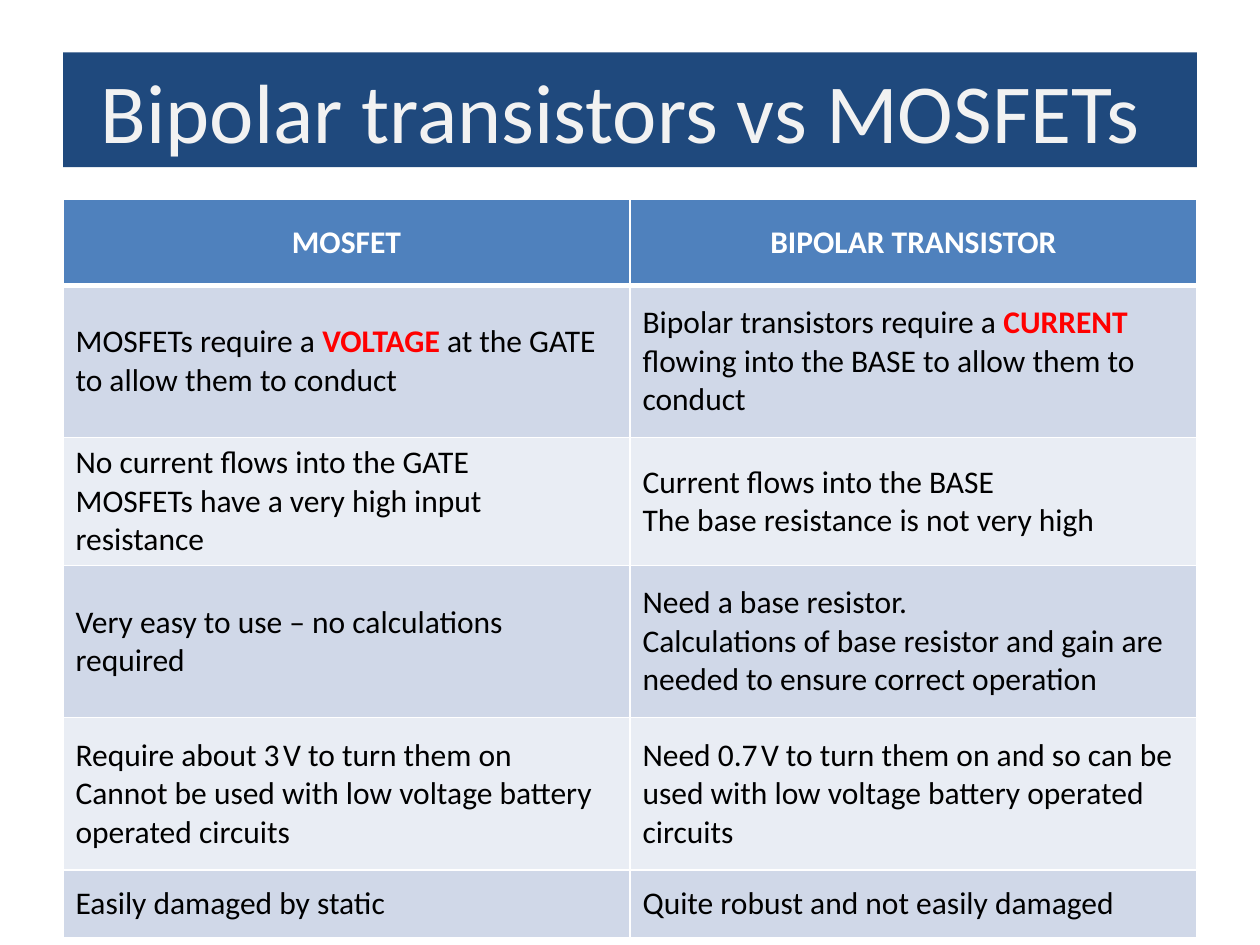
from lxml import etree
from pptx import Presentation
from pptx.dml.color import RGBColor
from pptx.enum.text import MSO_ANCHOR, MSO_AUTO_SIZE, PP_ALIGN
from pptx.oxml.ns import qn
from pptx.util import Pt

MIDDLE = MSO_ANCHOR.MIDDLE
NO_FIT = MSO_AUTO_SIZE.NONE
LEFT, CENTER = PP_ALIGN.LEFT, PP_ALIGN.CENTER
WHITE, BLACK, RED = "FFFFFF", "000000", "FF0000"
HEAD, BANDS = "4F81BD", ("E9EDF4", "D0D8E8")
GAP = (" ", {"size": 8})


def color(text):
    return RGBColor.from_string(text)


def key(text):
    return text, {"tint": RED, "bold": True}


class Deck:
    font = "Calibri"
    size = 18

    def __init__(self, width, height):
        self.show = Presentation()
        self.show.slide_width = Pt(width)
        self.show.slide_height = Pt(height)
        self.slide = self.show.slides.add_slide(self.show.slide_layouts[5])

    def style(self, para, size, tint, bold, align):
        para.alignment = align
        font = para.font
        font.name, font.size, font.bold = self.font, Pt(size), bold
        font.color.rgb = color(tint)

    def title(self, text, box, fill, tint, size):
        shape = self.slide.shapes.title
        shape.left, shape.top, shape.width, shape.height = map(Pt, box)
        shape.fill.solid()
        shape.fill.fore_color.rgb = color(fill)
        frame = shape.text_frame
        frame.text = text
        frame.auto_size = NO_FIT
        frame.vertical_anchor = MIDDLE
        self.style(frame.paragraphs[0], size, tint, False, CENTER)

    def run(self, para, part):
        text, look = (part, {}) if isinstance(part, str) else part
        run = para.add_run()
        run.text = text
        if "size" in look:
            run.font.size = Pt(look["size"])
        if "tint" in look:
            run.font.color.rgb = color(look["tint"])
        if "bold" in look:
            run.font.bold = look["bold"]

    def edge(self, cell, side, width):
        props = cell._tc.get_or_add_tcPr()
        line = etree.SubElement(props, qn("a:ln" + side), w=str(Pt(width)))
        fill = etree.SubElement(line, qn("a:solidFill"))
        etree.SubElement(fill, qn("a:srgbClr"), val=WHITE)

    def cell(self, cell, paras, row):
        head = row == 0
        for side in "LRTB":
            thick = (head and side == "B") or (row == 1 and side == "T")
            self.edge(cell, side, 3 if thick else 1)
        cell.fill.solid()
        cell.fill.fore_color.rgb = color(HEAD if head else BANDS[row % 2])
        cell.vertical_anchor = MIDDLE
        frame = cell.text_frame
        for i, parts in enumerate(paras):
            para = frame.add_paragraph() if i else frame.paragraphs[0]
            tint, align = (WHITE, CENTER) if head else (BLACK, LEFT)
            self.style(para, self.size, tint, head, align)
            for part in parts:
                self.run(para, part)

    def table(self, rows, box, highs):
        frame = self.slide.shapes.add_table(len(rows), len(rows[0]), *map(Pt, box))
        table = frame.table
        for r, (row, high) in enumerate(zip(rows, highs)):
            table.rows[r].height = Pt(high)
            for c, paras in enumerate(row):
                self.cell(table.cell(r, c), paras, r)

    def save(self):
        self.show.save("out.pptx")


ROWS = [
    ([["MOSFET"]], [["BIPOLAR TRANSISTOR"]]),
    (
        [["MOSFETs require a ", key("VOLTAGE "), "at the GATE to allow them to conduct"]],
        [["Bipolar transistors require a ", key("CURRENT "),
          "flowing into the BASE to allow them to conduct"]],
    ),
    (
        [["No current flows into the GATE"], ["MOSFETs have a very high input resistance"]],
        [["Current flows into the BASE"], ["The base resistance is not very high"]],
    ),
    (
        [["Very easy to use – no calculations required"]],
        [["Need a base resistor."],
         ["Calculations of base resistor and gain are needed to ensure correct operation"]],
    ),
    (
        [["Require about 3", GAP, "V to turn them on"],
         ["Cannot be used with low voltage battery operated circuits"]],
        [["Need 0.7", GAP,
          "V to turn them on and so can be used with low voltage battery operated circuits"]],
    ),
    ([["Easily damaged by static"]], [["Quite robust and not easily damaged"]]),
]


def main():
    deck = Deck(720, 540)
    deck.title("Bipolar transistors vs MOSFETs ", (36, 30, 648, 65.5), "1F497D", "F2F2F2", 48)
    highs = (49, 87, 64, 87, 87, 39)
    deck.table(ROWS, (36, 114, 648, sum(highs)), highs)
    deck.save()


if __name__ == "__main__":
    main()
